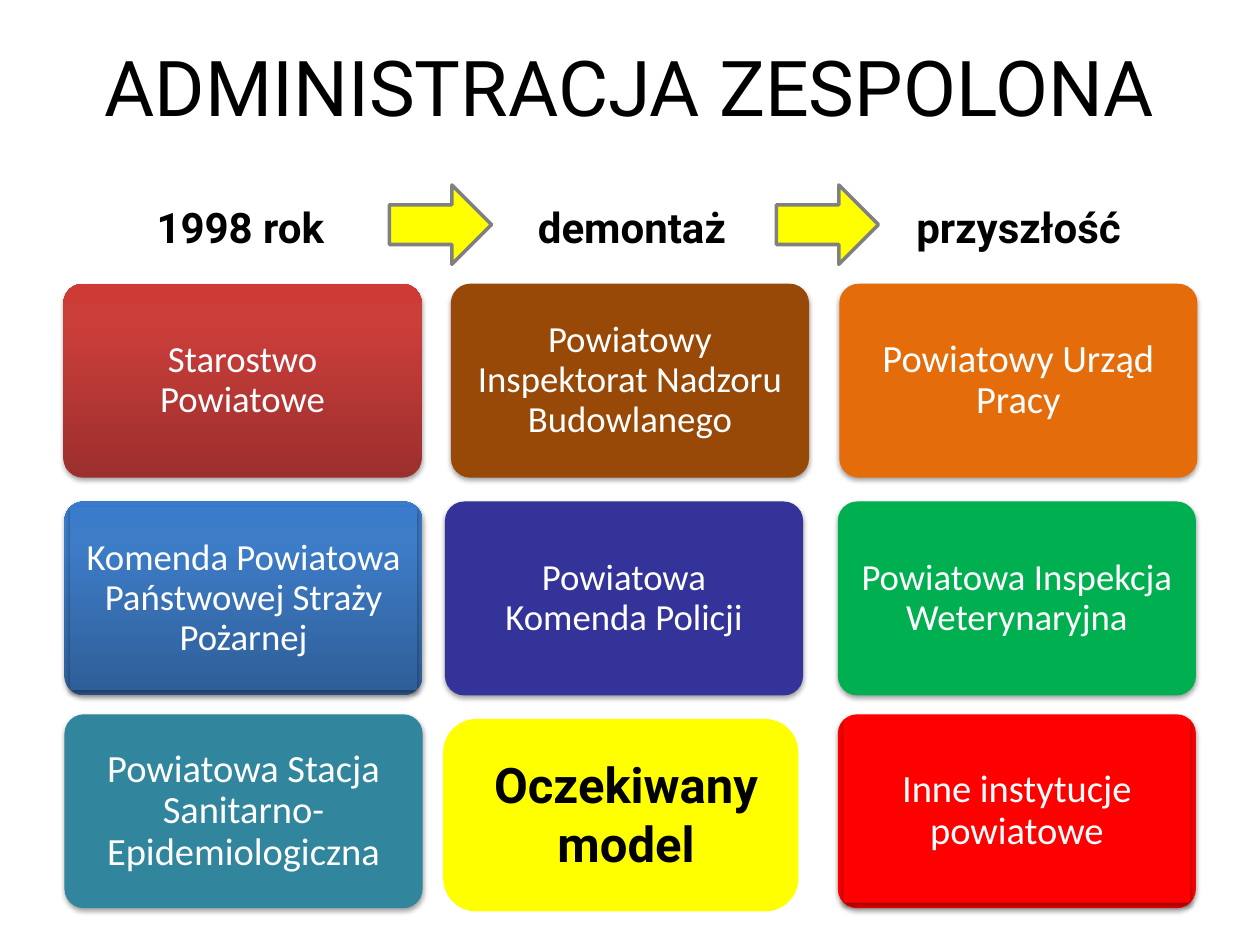
from copy import deepcopy
from dataclasses import dataclass

from pptx import Presentation
from pptx import util as u
from pptx.dml.color import RGBColor
from pptx.enum import shapes, text
from pptx.oxml import parse_xml
from pptx.oxml.ns import nsdecls, qn


@dataclass(frozen=True)
class Theme:
    head: str = "Roboto"
    body: str = "Calibri"
    black: str = "000000"
    white: str = "FFFFFF"
    yellow: str = "FFFF00"
    grey: str = "808080"
    red_grad: tuple = ("9C2F2D", "CB3E3A", "CE3B37")
    blue_grad: tuple = ("2F5F99", "3D7CC7", "3A7CCB")
    brown: str = "984807"
    orange: str = "E46C0A"
    navy: str = "333399"
    green: str = "00B050"
    teal: str = "31859C"
    red: str = "FF0000"
    title: int = 44
    model: int = 28
    heading: int = 24
    large: int = 22
    normal: int = 21


T = Theme()
TILE_W, TILE_H, EDGE, INSET = 7.22, 3.91, 0.11, 0.23
ROWS = (5.72, 10.11, 14.4)
TILES = [
    (1.28, 0, "Starostwo\vPowiatowe", T.red_grad, T.normal, False),
    (9.09, 0, "Powiatowy Inspektorat Nadzoru Budowlanego", T.brown, T.normal, False),
    (16.92, 0, "Powiatowy Urząd Pracy", T.orange, T.large, False),
    (1.3, 1, "Komenda Powiatowa Państwowej Straży Pożarnej", T.blue_grad, T.normal, True),
    (8.97, 1, "Powiatowa Komenda Policji", T.navy, T.normal, False),
    (16.89, 1, "Powiatowa Inspekcja Weterynaryjna", T.green, T.normal, False),
    (1.3, 2, "Powiatowa Stacja Sanitarno-Epidemiologiczna", T.teal, T.large, False),
    (16.89, 2, "Inne instytucje powiatowe", T.red, T.large, True),
]
HEADINGS = [(1.3, 7.09, "1998 rok"), (9.17, 7.14, "demontaż"), (17.04, 6.99, "przyszłość")]
ARROWS = (7.85, 15.65)


def set_all(obj, values):
    for name, value in values.items():
        setattr(obj, name, value)


def write(tf, words, size, font, color, bold=False, **para):
    tf.word_wrap = True
    p = tf.paragraphs[0]
    p.text = words
    set_all(p, {"alignment": text.PP_ALIGN.CENTER, **para})
    for r in p.runs:
        set_all(r.font, {"size": u.Pt(size), "name": font, "bold": bold})
        r.font.color.rgb = RGBColor.from_string(color)


def paint(sp, color):
    if isinstance(color, str):
        sp.fill.solid()
        sp.fill.fore_color.rgb = RGBColor.from_string(color)
        return
    sp.fill.gradient()
    sp.fill.gradient_angle = 90
    stops = sp._element.spPr.find(qn("a:gradFill")).find(qn("a:gsLst"))
    stops.append(deepcopy(stops[-1]))
    for stop, place, c in zip(sp.fill.gradient_stops, (0, 0.8, 1), color):
        stop.position = place
        stop.color.rgb = RGBColor.from_string(c)


def add_shape(s, kind, x, y, w, h, color, line=None):
    sp = s.shapes.add_shape(kind, u.Cm(x), u.Cm(y), u.Cm(w), u.Cm(h))
    sp.shadow.inherit = False
    paint(sp, color)
    if line:
        sp.line.color.rgb = RGBColor.from_string(line)
        sp.line.width = u.Pt(2)
    else:
        sp.line.fill.background()
    return sp


def add_shadow(sp):
    sp._element.spPr.find(qn("a:effectLst")).append(parse_xml(
        f'<a:outerShdw {nsdecls("a")} blurRad="{u.Pt(3.1)}" dist="{u.Pt(1.7)}" '
        f'dir="5400000" rotWithShape="0"><a:srgbClr val="{T.black}">'
        '<a:alpha val="36000"/></a:srgbClr></a:outerShdw>'))


def add_tile(s, x, row, words, color, size, panel):
    y = ROWS[row]
    sp = add_shape(s, shapes.MSO_SHAPE.ROUNDED_RECTANGLE, x, y, TILE_W, TILE_H, color)
    sp.adjustments[0] = 0.1
    add_shadow(sp)
    margin = INSET + EDGE
    if panel:
        sp = add_shape(s, shapes.MSO_SHAPE.RECTANGLE, x + EDGE, y + EDGE,
                       TILE_W - 2 * EDGE, TILE_H - 2 * EDGE, color)
        add_shadow(sp)
        margin = INSET
    tf = sp.text_frame
    set_all(tf, {f"margin_{side}": u.Cm(margin) for side in ("left", "top", "right", "bottom")})
    tf.vertical_anchor = text.MSO_ANCHOR.MIDDLE
    write(tf, words, size, T.body, T.white, line_spacing=0.9)


def add_label(s, x, y, w, h, words, size):
    sp = s.shapes.add_textbox(u.Cm(x), u.Cm(y), u.Cm(w), u.Cm(h))
    write(sp.text_frame, words, size, T.head, T.black, bold=True)


def add_title(s, words):
    sp = s.shapes.title
    set_all(sp, {"left": u.Cm(1.27), "top": u.Cm(0.13),
                 "width": u.Cm(22.86), "height": u.Cm(3.18)})
    sp.text_frame.vertical_anchor = text.MSO_ANCHOR.MIDDLE
    write(sp.text_frame, words, T.title, T.head, T.black)


def main():
    prs = Presentation()
    set_all(prs, {"slide_width": u.Cm(25.4), "slide_height": u.Cm(19.05)})
    s = prs.slides.add_slide(prs.slide_layouts[5])
    add_title(s, "ADMINISTRACJA ZESPOLONA")
    for x, w, words in HEADINGS:
        add_label(s, x, 3.94, w, 1.27, words, T.heading)
    for x in ARROWS:
        add_shape(s, shapes.MSO_SHAPE.RIGHT_ARROW, x, 3.73, 2.06, 1.6, T.yellow, T.grey)
    for tile in TILES:
        add_tile(s, *tile)
    add_shape(s, shapes.MSO_SHAPE.ROUNDED_RECTANGLE, 8.97, 14.53, 7.09, 3.81, T.yellow, T.yellow)
    add_label(s, 9.19, 15.09, 6.86, 2.64, "Oczekiwany model", T.model)
    prs.save("out.pptx")


if __name__ == "__main__":
    main()
